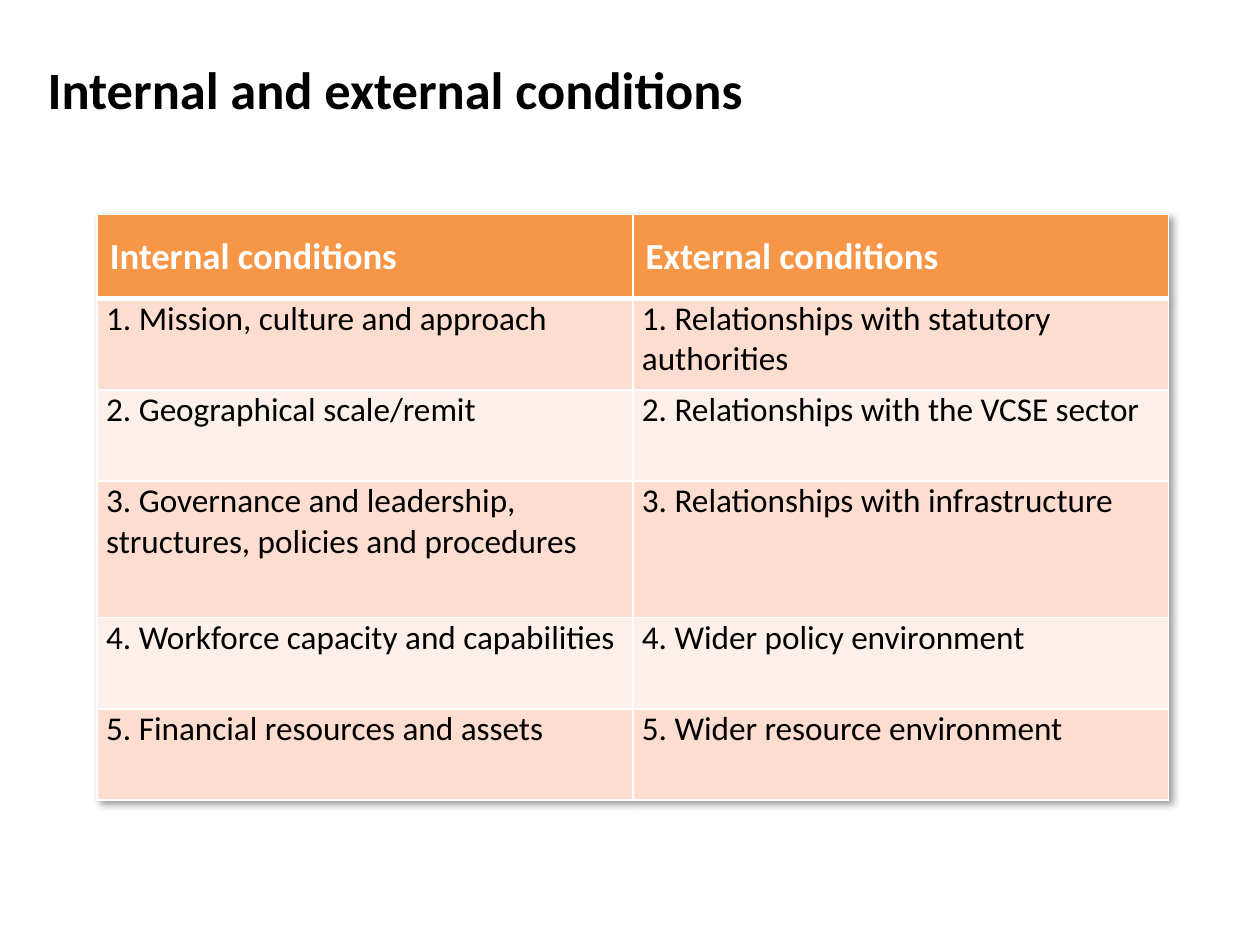
import pptx
import pptx.util
import pptx.dml.color
import pptx.enum.text
import pptx.oxml
import pptx.oxml.ns

Cm = pptx.util.Cm
Pt = pptx.util.Pt
RGBColor = pptx.dml.color.RGBColor
MIDDLE = pptx.enum.text.MSO_ANCHOR.MIDDLE
TOP = pptx.enum.text.MSO_ANCHOR.TOP

BLACK = RGBColor(0x00, 0x00, 0x00)
WHITE = RGBColor(0xFF, 0xFF, 0xFF)
ORANGE = RGBColor(0xF7, 0x96, 0x46)
PEACH = RGBColor(0xFC, 0xDD, 0xCF)
PALE = RGBColor(0xFD, 0xEF, 0xE9)

TITLE = {"name": "Calibri", "size": Pt(30), "bold": True}
HEAD = {"name": "Calibri", "size": Pt(21), "bold": True}
BODY = {"name": "Calibri", "size": Pt(19), "bold": False}
HEAD_CELL = {"vertical_anchor": MIDDLE}
BODY_CELL = {
    "vertical_anchor": TOP,
    "margin_left": Cm(0.18),
    "margin_right": Cm(0.18),
    "margin_top": 0,
    "margin_bottom": 0,
}
HEAD_PARA = {}
BODY_PARA = {"space_before": Pt(12), "space_after": Pt(12)}

ROWS = [
    ("Internal conditions", "External conditions"),
    ("1. Mission, culture and approach",
     "1. Relationships with statutory authorities"),
    ("2. Geographical scale/remit", "2. Relationships with the VCSE sector"),
    ("3. Governance and leadership, structures, policies and procedures",
     "3. Relationships with infrastructure"),
    ("4. Workforce capacity and capabilities", "4. Wider policy environment"),
    ("5. Financial resources and assets", "5. Wider resource environment"),
]
HEIGHTS = [1.7, 1.84, 1.84, 2.75, 1.84, 1.84]
WIDTH = 10.8


def apply(item, form):
    for key, value in form.items():
        setattr(item, key, value)


def write(frame, text, form, color, para):
    line = frame.paragraphs[0]
    apply(line, para)
    run = line.add_run()
    run.text = text
    apply(run.font, form)
    run.font.color.rgb = color


def add_title(slide, text):
    box = slide.shapes.add_textbox(Cm(0.71), Cm(0.91), Cm(22.86), Cm(1.75))
    apply(box.text_frame, {"word_wrap": True, "vertical_anchor": MIDDLE})
    write(box.text_frame, text, TITLE, BLACK, HEAD_PARA)


def add_edges(cell, widths):
    props = cell._tc.get_or_add_tcPr()
    for index, (side, width) in enumerate(widths.items()):
        edge = pptx.oxml.parse_xml(
            f'<a:ln{side} {pptx.oxml.ns.nsdecls("a")} w="{Pt(width)}">'
            f'<a:solidFill><a:srgbClr val="{WHITE}"/></a:solidFill></a:ln{side}>')
        props.insert(index, edge)


def add_shadow(table):
    shade = pptx.oxml.parse_xml(
        f'<a:effectLst {pptx.oxml.ns.nsdecls("a")}>'
        f'<a:outerShdw blurRad="{Pt(4)}" dist="{Pt(3)}" dir="2700000" algn="tl">'
        f'<a:srgbClr val="{BLACK}"><a:alpha val="40000"/></a:srgbClr>'
        '</a:outerShdw></a:effectLst>')
    table._tbl.tblPr.insert(0, shade)


def fill_cell(cell, text, row):
    head = row == 0
    apply(cell, HEAD_CELL if head else BODY_CELL)
    cell.fill.solid()
    cell.fill.fore_color.rgb = ORANGE if head else PEACH if row % 2 else PALE
    write(cell.text_frame, text, HEAD if head else BODY,
          WHITE if head else BLACK, HEAD_PARA if head else BODY_PARA)
    add_edges(cell, {"L": 1, "R": 1, "T": 3 if row == 1 else 1,
                     "B": 3 if head else 1})


def add_grid(slide, rows):
    table = slide.shapes.add_table(
        len(rows), len(rows[0]), Cm(1.96), Cm(4.32),
        Cm(WIDTH * len(rows[0])), Cm(sum(HEIGHTS))).table
    for col in table.columns:
        col.width = Cm(WIDTH)
    for row, texts in enumerate(rows):
        table.rows[row].height = Cm(HEIGHTS[row])
        for col, text in enumerate(texts):
            fill_cell(table.cell(row, col), text, row)
    add_shadow(table)


def main():
    deck = pptx.Presentation()
    apply(deck, {"slide_width": Cm(25.4), "slide_height": Cm(19.05)})
    slide = deck.slides.add_slide(deck.slide_layouts[6])
    add_title(slide, "Internal and external conditions")
    add_grid(slide, ROWS)
    deck.save("out.pptx")


if __name__ == "__main__":
    main()
